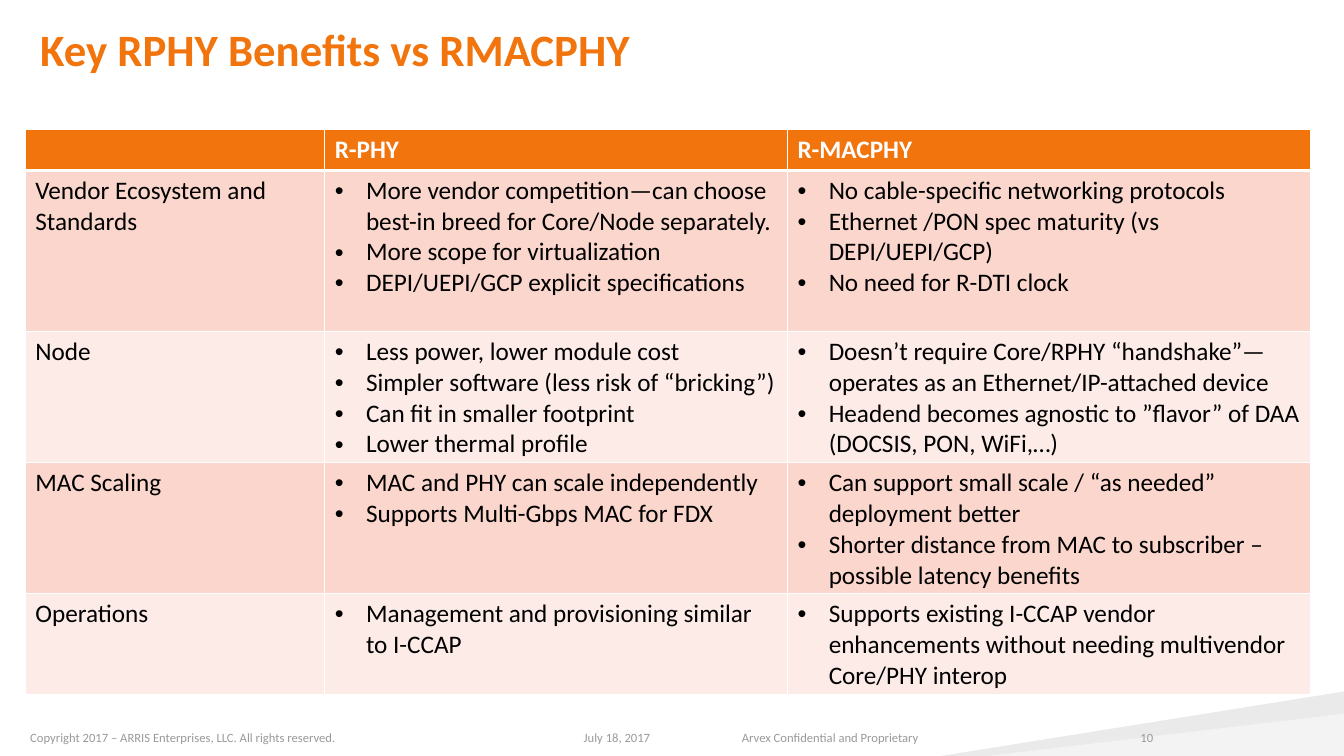
from lxml import etree
from pptx import Presentation
from pptx import util as u
from pptx.dml.color import RGBColor
from pptx.enum import text
from pptx.oxml.ns import qn

HUES = {"brand": "F1740D", "ink": "000000", "white": "FFFFFF", "foot": "9A9A9D",
        "odd": "FAD6CC", "even": "FCEBE7", "dark": "EAEAEA", "light": "F3F3F3"}
LEFT, MID, RIGHT = text.PP_ALIGN.LEFT, text.PP_ALIGN.CENTER, text.PP_ALIGN.RIGHT
TOP, BASE = text.MSO_ANCHOR.TOP, text.MSO_ANCHOR.BOTTOM

COLS = [22.28, 34.43, 38.93]
ROWS = [5.47, 21.33, 17.33, 17.33, 13.33]
HEADS = ["", "R-PHY", "R-MACPHY"]
BODY = [
    ("Vendor Ecosystem and Standards",
     ["More vendor competition—can choose best-in breed for Core/Node separately.",
      "More scope for virtualization",
      "DEPI/UEPI/GCP explicit specifications"],
     ["No cable-specific networking protocols",
      "Ethernet /PON spec maturity (vs DEPI/UEPI/GCP)",
      "No need for R-DTI clock"]),
    ("Node",
     ["Less power, lower module cost",
      "Simpler software (less risk of “bricking”)",
      "Can fit in smaller footprint",
      "Lower thermal profile"],
     ["Doesn’t require Core/RPHY “handshake”—operates as an Ethernet/IP-attached device",
      "Headend becomes agnostic to ”flavor” of DAA (DOCSIS, PON, WiFi,…)"]),
    ("MAC Scaling",
     ["MAC and PHY can scale independently",
      "Supports Multi-Gbps MAC for FDX"],
     ["Can support small scale / “as needed” deployment better",
      "Shorter distance from MAC to subscriber – possible latency benefits"]),
    ("Operations",
     ["Management and provisioning similar to I-CCAP"],
     ["Supports existing I-CCAP vendor enhancements without needing multivendor Core/PHY interop"]),
]
FOOT = [
    ("Copyright 2017 – ARRIS Enterprises, LLC. All rights reserved.", 2.25, 31.25, LEFT),
    ("Arvex Confidential and Proprietary", 55.2, 27.3, LEFT),
    ("10", 82.5, 3.3, RIGHT),
    ("July 18, 2017", 36.9, 18, MID),
]


class Deck:
    font = "Calibri"

    def __init__(self, wide, high):
        self.prs = Presentation()
        self.prs.slide_width, self.prs.slide_height = u.Inches(wide), u.Inches(high)
        self.slide = self.prs.slides.add_slide(self.prs.slide_layouts[6])

    def x(self, share):
        return round(self.prs.slide_width * share / 100)

    def y(self, share):
        return round(self.prs.slide_height * share / 100)

    def paint(self, item, hue):
        item.fill.solid()
        item.fill.fore_color.rgb = RGBColor.from_string(HUES[hue])

    def run(self, para, words, size, hue, bold=False):
        run = para.add_run()
        run.text = words
        run.font.name, run.font.size, run.font.bold = self.font, u.Pt(size), bold
        run.font.color.rgb = RGBColor.from_string(HUES[hue])

    def wedge(self, points, hue):
        spots = [(self.x(a), self.y(b)) for a, b in points]
        form = self.slide.shapes.build_freeform(*spots[0], scale=1)
        form.add_line_segments(spots[1:], close=True)
        shape = form.convert_to_shape()
        shape.shadow.inherit = False
        self.paint(shape, hue)
        shape.line.fill.background()

    def label(self, words, at, size, hue, bold=False, align=LEFT, anchor=TOP, pad=0, lead=1.0):
        left, top, wide, high = at
        box = self.slide.shapes.add_textbox(self.x(left), self.y(top), self.x(wide), self.y(high))
        frame = box.text_frame
        frame.word_wrap, frame.vertical_anchor = True, anchor
        frame.margin_left = frame.margin_right = u.Inches(pad)
        frame.margin_top = frame.margin_bottom = 0
        para = frame.paragraphs[0]
        para.alignment, para.line_spacing = align, lead
        self.run(para, words, size, hue, bold)

    def bullet(self, para):
        props = para._p.get_or_add_pPr()
        dent = u.Inches(0.31)
        props.set("marL", str(dent))
        props.set("indent", str(-dent))
        etree.SubElement(props, qn("a:buFont"), typeface="Arial")
        etree.SubElement(props, qn("a:buChar"), char="•")

    def edge(self, cell, row):
        props = cell._tc.get_or_add_tcPr()
        thick = {"lnT": 3 if row == 1 else 1, "lnB": 3 if row == 0 else 1}
        for side in ("lnL", "lnR", "lnT", "lnB"):
            line = etree.SubElement(props, qn("a:" + side), w=str(u.Pt(thick.get(side, 1))))
            fill = etree.SubElement(line, qn("a:solidFill"))
            etree.SubElement(fill, qn("a:srgbClr"), val=HUES["white"])

    def cell(self, cell, row, words):
        head = row == 0
        self.edge(cell, row)
        self.paint(cell, "brand" if head else "odd" if row % 2 else "even")
        listed = isinstance(words, list)
        for n, line in enumerate(words if listed else [words]):
            frame = cell.text_frame
            para = frame.add_paragraph() if n else frame.paragraphs[0]
            if listed:
                self.bullet(para)
            if line:
                self.run(para, line, 18, "white" if head else "ink", head)

    def table(self, left, top, cols, rows, data):
        grid = self.slide.shapes.add_table(
            len(rows), len(cols), self.x(left), self.y(top),
            self.x(sum(cols)), self.y(sum(rows))).table
        for col, wide in zip(grid.columns, cols):
            col.width = self.x(wide)
        for r, (row, high) in enumerate(zip(grid.rows, rows)):
            row.height = self.y(high)
            for cell, words in zip(row.cells, data[r]):
                self.cell(cell, r, words)


def main():
    deck = Deck(13.33, 7.5)
    deck.wedge([(100, 91.47), (100, 100), (70, 100)], "dark")
    deck.wedge([(100, 94.4), (100, 100), (73.5, 100)], "light")
    deck.label("Key RPHY Benefits vs RMACPHY", (2.25, 4, 73.75, 13.33), 32, "brand",
               bold=True, pad=0.1, lead=0.85)
    for words, left, wide, align in FOOT:
        deck.label(words, (left, 95.87, wide, 2.67), 9, "foot", align=align, anchor=BASE)
    deck.table(1.88, 17.07, COLS, ROWS, [HEADS, *BODY])
    deck.prs.save("out.pptx")


if __name__ == "__main__":
    main()
